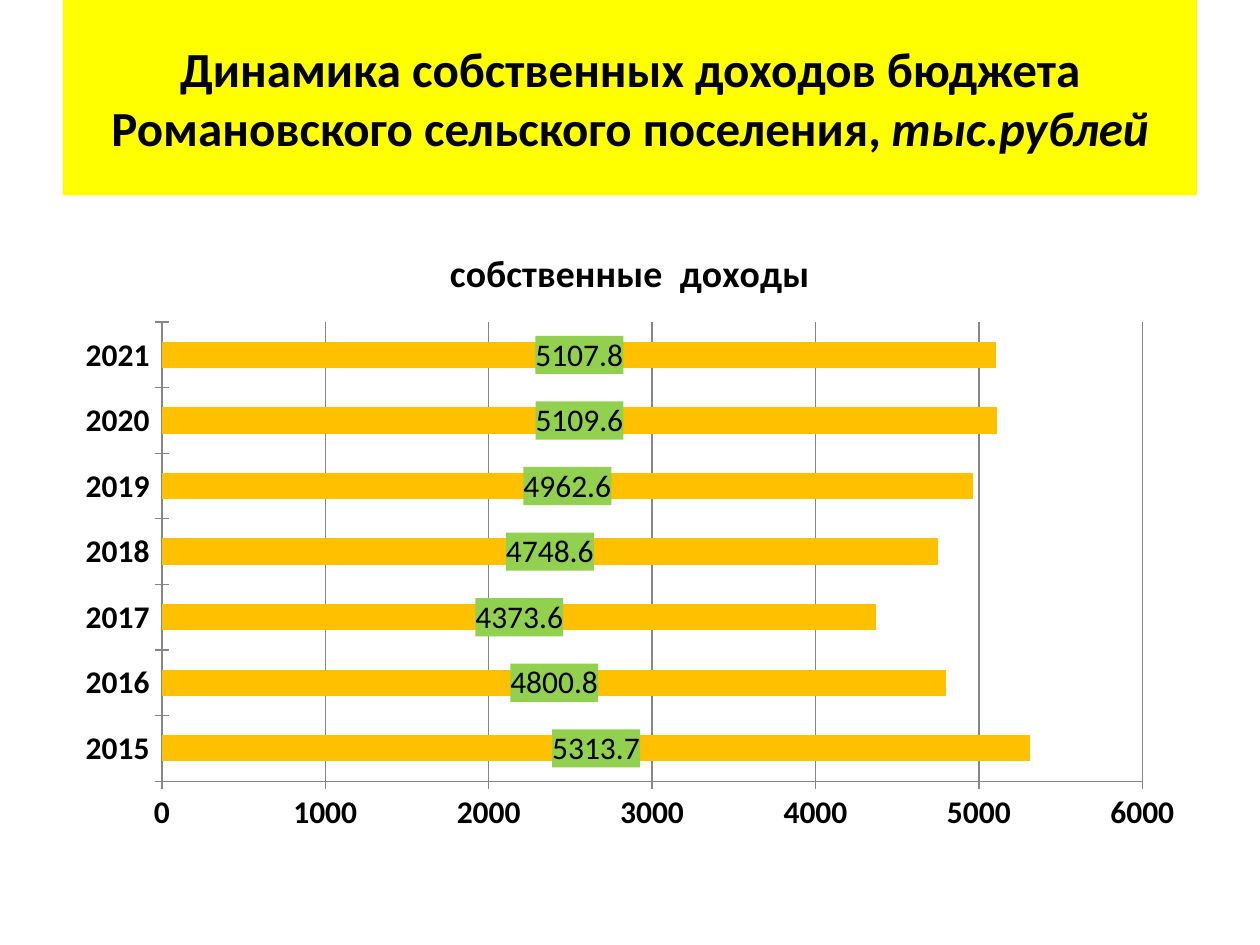
from lxml import etree
from pptx import Presentation
from pptx.chart.data import CategoryChartData
from pptx.dml.color import RGBColor
from pptx.enum import chart as ch, shapes, text
from pptx.oxml import parse_xml
from pptx.oxml.ns import nsdecls
from pptx.util import Inches, Pt

# Content
HEADING = [
    ("Динамика собственных доходов бюджета Романовского сельского поселения, ", False),
    ("тыс.рублей", True),
]
SERIES = "собственные  доходы"
INCOME = {
    "2015": 5313.7,
    "2016": 4800.8,
    "2017": 4373.6,
    "2018": 4748.6,
    "2019": 4962.6,
    "2020": 5109.6,
    "2021": 5107.8,
}
COLORS = {"banner": "FFFF00", "bar": "FFC000", "label": "92D050",
          "text": "000000", "line": "868686"}
FONT = "Calibri"
LEFT, WIDTH = Inches(0.5), Inches(9)


def rgb(key):
    return RGBColor.from_string(COLORS[key])


def style(font, size, bold):
    font.name, font.size, font.bold = FONT, Pt(size), bold
    font.color.rgb = rgb("text")


def style_line(line):
    line.color.rgb = rgb("line")
    line.width = Pt(0.75)


prs = Presentation()
prs.slide_width, prs.slide_height = Inches(10), Inches(7.5)
slide = prs.slides.add_slide(prs.slide_layouts[6])

# Heading banner
banner = slide.shapes.add_shape(
    shapes.MSO_SHAPE.RECTANGLE, LEFT, 0, WIDTH, Inches(1.55))
banner.shadow.inherit = False
banner.fill.solid()
banner.fill.fore_color.rgb = rgb("banner")
banner.line.fill.background()
banner.text_frame.word_wrap = True
banner.text_frame.vertical_anchor = text.MSO_ANCHOR.MIDDLE
heading = banner.text_frame.paragraphs[0]
heading.alignment = text.PP_ALIGN.CENTER
for words, italic in HEADING:
    run = heading.add_run()
    run.text = words
    style(run.font, 28, True)
    run.font.italic = italic

# Income chart
data = CategoryChartData(number_format="General")
data.categories = list(INCOME)
data.add_series(SERIES, list(INCOME.values()))
chart = slide.shapes.add_chart(
    ch.XL_CHART_TYPE.BAR_STACKED, LEFT, Inches(1.75), WIDTH, Inches(4.95), data).chart
style(chart.font, 18, False)
chart.has_legend = False
chart.has_title = True
chart.chart_title.include_in_layout = False
chart.chart_title.text_frame.text = SERIES
style(chart.chart_title.text_frame.paragraphs[0].runs[0].font, 21.6, True)

# Axes
for axis in (chart.category_axis, chart.value_axis):
    axis.major_tick_mark = ch.XL_TICK_MARK.CROSS
    axis.minor_tick_mark = ch.XL_TICK_MARK.NONE
    style(axis.tick_labels.font, 18, True)
    style_line(axis.format.line)
values = chart.value_axis
values.minimum_scale, values.maximum_scale, values.major_unit = 0, 6000, 1000
values.has_major_gridlines = True
style_line(values.major_gridlines.format.line)

# Bars and their value labels
plot = chart.plots[0]
plot.vary_by_categories = False
plot.gap_width, plot.overlap = 150, 100
bars = plot.series[0]
bars.format.fill.solid()
bars.format.fill.fore_color.rgb = rgb("bar")
labels = bars.data_labels
labels.show_value = True
labels.position = ch.XL_LABEL_POSITION.CENTER
style(labels.font, 18, False)
label_fill = parse_xml(
    f'<c:spPr {nsdecls("c", "a")}><a:solidFill>'
    f'<a:srgbClr val="{COLORS["label"]}"/></a:solidFill></c:spPr>')
labels.font  # the text properties must follow the fill
text_props = bars._element.find(
    "{*}dLbls/{*}txPr")
text_props.addprevious(label_fill)

prs.save("out.pptx")
